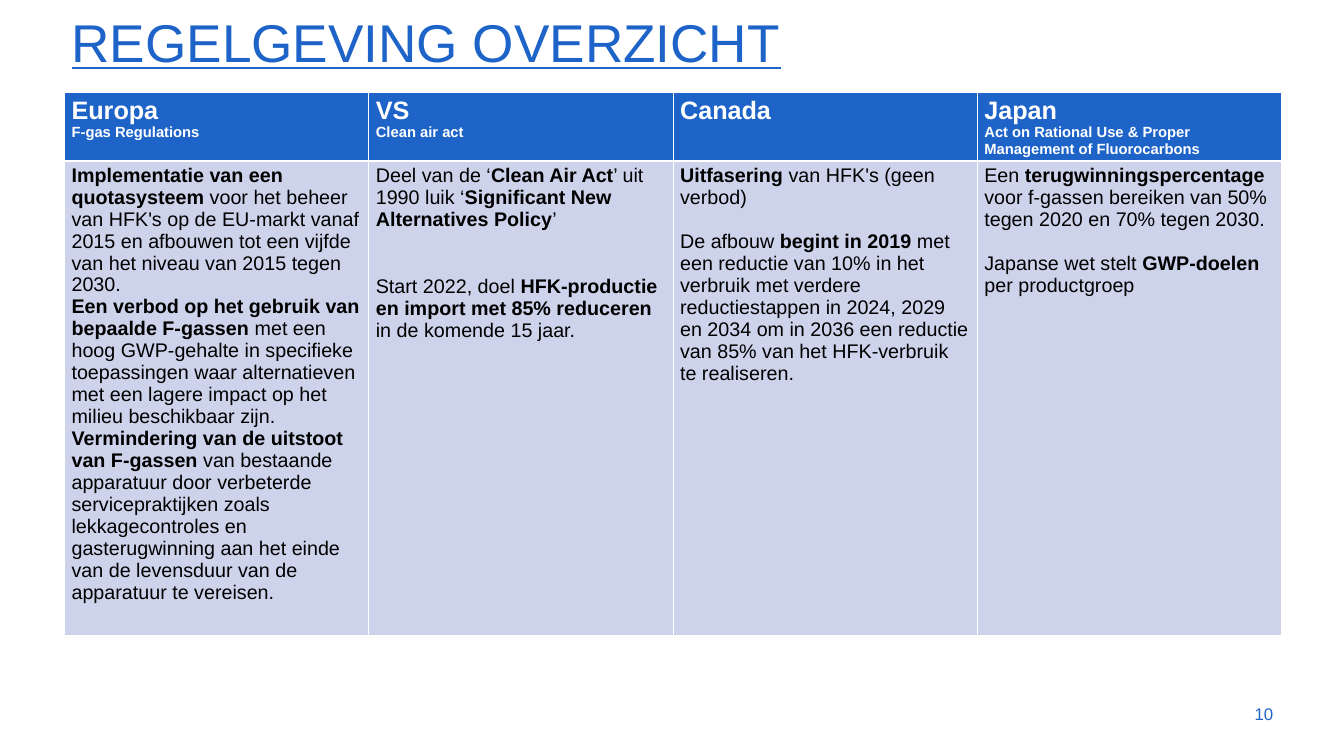
import pptx
import pptx.dml.color
import pptx.enum.text
import pptx.oxml
import pptx.oxml.ns
import pptx.util

Pt = pptx.util.Pt
ALIGN = pptx.enum.text.PP_ALIGN
ANCHOR = pptx.enum.text.MSO_ANCHOR

BLUE, PALE_BLUE, WHITE, BLACK = "1E64C8", "CDD3EB", "FFFFFF", "000000"
LEFT = 65.5
TABLE_TOP = 94.3
COLUMN_WIDTH = 309.06
HEADER_HEIGHT, BODY_HEIGHT = 68, 482
BODY_LINE = 23

REGIONS = [
    ("Europa", "F-gas Regulations", 0, [
        "**Implementatie van een quotasysteem** voor het beheer van HFK's op de EU-markt "
        "vanaf 2015 en afbouwen tot een vijfde van het niveau van 2015 tegen 2030.",
        "**Een verbod op het gebruik van bepaalde F-gassen **met een hoog GWP-gehalte in "
        "specifieke toepassingen waar alternatieven met een lagere impact op het milieu "
        "beschikbaar zijn.",
        "**Vermindering van de uitstoot van F-gassen **van bestaande apparatuur door "
        "verbeterde servicepraktijken zoals lekkagecontroles en gasterugwinning aan het "
        "einde van de levensduur van de apparatuur te vereisen.",
    ]),
    ("VS", "Clean air act", 2, [
        "Deel van de ‘**Clean Air Act**’ uit 1990 luik ‘**Significant New Alternatives Policy**’",
        "Start 2022, doel **HFK-productie en import met 85% reduceren **in de komende 15 jaar.",
    ]),
    ("Canada", "", 1, [
        "**Uitfasering** van HFK's (geen verbod)",
        "De afbouw **begint in 2019 **met een reductie van 10% in het verbruik met verdere "
        "reductiestappen in 2024, 2029 en 2034 om in 2036 een reductie van 85% van het "
        "HFK-verbruik te realiseren.",
    ]),
    ("Japan", "Act on Rational Use & Proper Management of Fluorocarbons", 1, [
        "Een **terugwinningspercentage **voor f-gassen bereiken van 50% tegen 2020 en 70% "
        "tegen 2030.",
        "Japanse wet stelt **GWP-doelen** per productgroep",
    ]),
]


def color(value):
    """Turn a hex string into a colour."""
    return pptx.dml.color.RGBColor.from_string(value)


def write_text(paragraph, text, size, fill, bold=False, underline=False,
               align=ALIGN.LEFT, space_before=0, line_spacing=1.0):
    """Write formatted text, with parts between double asterisks in bold."""
    paragraph.alignment = align
    paragraph.space_before = Pt(space_before)
    paragraph.line_spacing = line_spacing
    for index, part in enumerate(text.split("**")):
        if part:
            run = paragraph.add_run()
            run.text = part
            run.font.name = "Arial"
            run.font.size = Pt(size)
            run.font.bold = bold or index % 2 == 1
            run.font.underline = underline
            run.font.color.rgb = color(fill)


def style_cell(cell, fill, top, bottom):
    """Give a cell white borders and a solid fill."""
    properties = cell._tc.get_or_add_tcPr()
    for side, width in (("L", 1), ("R", 1), ("T", top), ("B", bottom)):
        properties.append(pptx.oxml.parse_xml(
            f'<a:ln{side} {pptx.oxml.ns.nsdecls("a")} w="{Pt(width)}"><a:solidFill>'
            f'<a:srgbClr val="{WHITE}"/></a:solidFill></a:ln{side}>'))
    cell.fill.solid()
    cell.fill.fore_color.rgb = color(fill)


def add_title(slide, text):
    """Place and fill the title placeholder."""
    title = slide.shapes.title
    title.left, title.top, title.width, title.height = Pt(LEFT), Pt(10.8), Pt(1237), Pt(67.7)
    frame = title.text_frame
    frame.word_wrap = True
    frame.auto_size = pptx.enum.text.MSO_AUTO_SIZE.NONE
    frame.vertical_anchor = ANCHOR.BOTTOM
    write_text(frame.paragraphs[0], text, 54, BLUE, underline=True, line_spacing=0.9)


def add_region_table(slide):
    """Add the table with one column for each region."""
    table = slide.shapes.add_table(
        2, len(REGIONS), Pt(LEFT), Pt(TABLE_TOP), Pt(COLUMN_WIDTH * len(REGIONS)),
        Pt(HEADER_HEIGHT + BODY_HEIGHT)).table
    table.rows[0].height = Pt(HEADER_HEIGHT)
    table.rows[1].height = Pt(BODY_HEIGHT)
    for index, (region, law, gap_lines, measures) in enumerate(REGIONS):
        table.columns[index].width = Pt(COLUMN_WIDTH)
        header, body = table.cell(0, index), table.cell(1, index)
        style_cell(header, BLUE, 1, 3)
        style_cell(body, PALE_BLUE, 3, 1)
        write_text(header.text_frame.paragraphs[0], region, 25.6, WHITE, bold=True)
        if law:
            write_text(header.text_frame.add_paragraph(), law, 15, WHITE, bold=True)
        write_text(body.text_frame.paragraphs[0], measures[0], 20, BLACK)
        for measure in measures[1:]:
            write_text(body.text_frame.add_paragraph(), measure, 20, BLACK,
                       space_before=gap_lines * BODY_LINE)


def add_page_number(slide, number):
    """Add the page number at the lower right."""
    frame = slide.shapes.add_textbox(Pt(1227.6), Pt(704.9), Pt(72.7), Pt(41)).text_frame
    frame.word_wrap = True
    frame.vertical_anchor = ANCHOR.MIDDLE
    write_text(frame.paragraphs[0], number, 17.1, BLUE, align=ALIGN.RIGHT)


def main():
    """Build and save the slide."""
    presentation = pptx.Presentation()
    presentation.slide_width, presentation.slide_height = Pt(1365.12), Pt(768.24)
    slide = presentation.slides.add_slide(presentation.slide_layouts[5])
    add_title(slide, "REGELGEVING OVERZICHT")
    add_region_table(slide)
    add_page_number(slide, "10")
    presentation.save("out.pptx")


if __name__ == "__main__":
    main()
